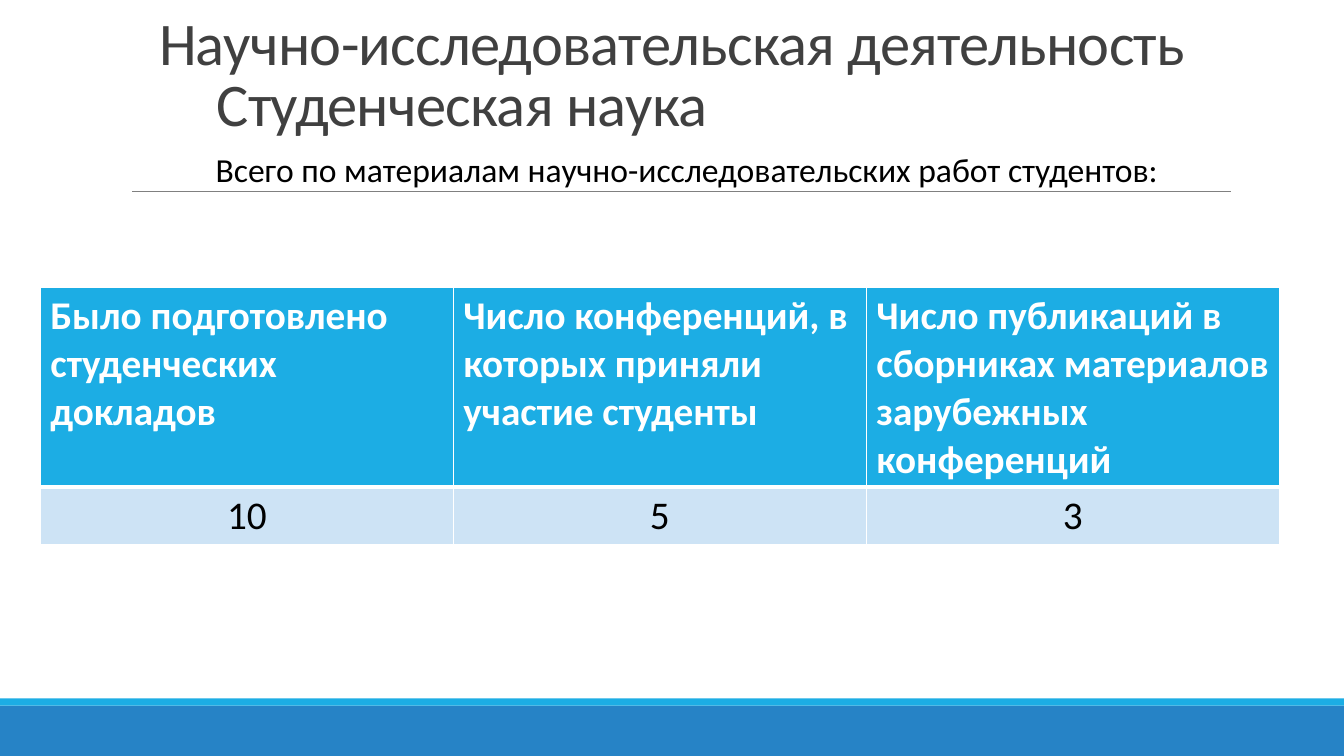
from dataclasses import dataclass

from lxml import etree
from pptx import Presentation
from pptx import util as u
from pptx.dml.color import RGBColor
from pptx.enum import shapes, text
from pptx.oxml import ns

COLUMNS, ROWS = 133.3, 75
CELL = u.Inches(0.1)
FONT = "Calibri"
WHITE, BLACK, GREY = "FFFFFF", "000000", "404040"
SKY, BLUE, PALE, RULE = "1CADE4", "2683C6", "CDE3F5", "808080"
LEFT, CENTER = text.PP_ALIGN.LEFT, text.PP_ALIGN.CENTER


@dataclass(frozen=True)
class Area:
    column: float
    row: float
    columns: float
    rows: float

    def place(self) -> tuple:
        return tuple(grid(n) for n in (self.column, self.row, self.columns, self.rows))


@dataclass(frozen=True)
class Band:
    area: Area
    color: str


@dataclass(frozen=True)
class Style:
    size: float
    color: str
    bold: bool = False
    spacing: int = 0


@dataclass(frozen=True)
class TableRow:
    words: tuple
    rows: float
    fill: str
    style: Style
    align: int
    bottom: float


TITLE = Style(43.2, GREY, spacing=-50)
SUBTITLE = Style(24, BLACK)
BANDS = (
    Band(Area(0, 70, COLUMNS, 5), BLUE),
    Band(Area(0, 69.3, COLUMNS, 0.7), SKY),
)
TABLE_ROWS = (
    TableRow(
        (
            "Было подготовлено студенческих докладов",
            "Число конференций, в которых приняли участие студенты",
            "Число публикаций в сборниках материалов зарубежных конференций",
        ),
        19.8, SKY, Style(28, WHITE, True), LEFT, 3,
    ),
    TableRow(("10", "5", "3"), 5.7, PALE, Style(28, BLACK), CENTER, 1),
)


def grid(count: float) -> int:
    return round(count * CELL)


def paint(value: str) -> RGBColor:
    return RGBColor.from_string(value)


def write(para, words: str, style: Style, align: int) -> None:
    para.alignment = align
    span = para.add_run()
    span.text = words
    font = span.font
    font.name, font.size, font.bold = FONT, u.Pt(style.size), style.bold
    font.color.rgb = paint(style.color)
    if style.spacing:
        font._element.set("spc", str(style.spacing))


def draw_band(page, band: Band) -> None:
    box = page.shapes.add_shape(shapes.MSO_SHAPE.RECTANGLE, *band.area.place())
    box.shadow.inherit = False
    box.fill.solid()
    box.fill.fore_color.rgb = paint(band.color)
    box.line.fill.background()


def draw_rule(page, left: float, right: float, row: float) -> None:
    rule = page.shapes.add_connector(
        shapes.MSO_CONNECTOR.STRAIGHT, grid(left), grid(row), grid(right), grid(row)
    )
    rule.line.color.rgb = paint(RULE)
    rule.line.width = u.Pt(0.5)
    etree.SubElement(rule._element.spPr, ns.qn("a:effectLst"))


def draw_title(page) -> None:
    frame = page.shapes.add_textbox(*Area(0, 0, COLUMNS, 14.3).place()).text_frame
    frame.word_wrap = True
    frame.vertical_anchor = text.MSO_ANCHOR.BOTTOM
    first, second = frame.paragraphs[0], frame.add_paragraph()
    write(first, "Научно-исследовательская деятельность", TITLE, CENTER)
    write(second, "Студенческая наука", TITLE, LEFT)
    second._p.get_or_add_pPr().set("marL", str(grid(20.5)))
    for para in frame.paragraphs:
        para.line_spacing = 0.85


def draw_subtitle(page) -> None:
    frame = page.shapes.add_textbox(*Area(20.4, 14.3, 96.4, 5).place()).text_frame
    frame.word_wrap = False
    frame.auto_size = text.MSO_AUTO_SIZE.SHAPE_TO_FIT_TEXT
    words = "Всего по материалам научно-исследовательских работ студентов:"
    write(frame.paragraphs[0], words, SUBTITLE, LEFT)


def edge(cell, side: str, width: float) -> None:
    line = etree.SubElement(cell._tc.get_or_add_tcPr(), ns.qn(f"a:ln{side}"))
    line.set("w", str(u.Pt(width)))
    fill = etree.SubElement(line, ns.qn("a:solidFill"))
    etree.SubElement(fill, ns.qn("a:srgbClr")).set("val", WHITE)


def draw_table(page) -> None:
    area = Area(4, 28.5, 122.9, sum(row.rows for row in TABLE_ROWS))
    count = len(TABLE_ROWS[0].words)
    table = page.shapes.add_table(len(TABLE_ROWS), count, *area.place()).table
    for column in table.columns:
        column.width = grid(area.columns / count)
    top = 1
    for index, row in enumerate(TABLE_ROWS):
        table.rows[index].height = grid(row.rows)
        for column, words in enumerate(row.words):
            cell = table.cell(index, column)
            for side, width in (("L", 1), ("R", 1), ("T", top), ("B", row.bottom)):
                edge(cell, side, width)
            cell.fill.solid()
            cell.fill.fore_color.rgb = paint(row.fill)
            write(cell.text_frame.paragraphs[0], words, row.style, row.align)
        top = row.bottom


def main() -> None:
    deck = Presentation()
    deck.slide_width, deck.slide_height = grid(COLUMNS), grid(ROWS)
    page = deck.slides.add_slide(deck.slide_layouts[6])
    for band in BANDS:
        draw_band(page, band)
    draw_rule(page, 13.1, 122.1, 19)
    draw_title(page)
    draw_table(page)
    draw_subtitle(page)
    deck.save("out.pptx")


if __name__ == "__main__":
    main()
